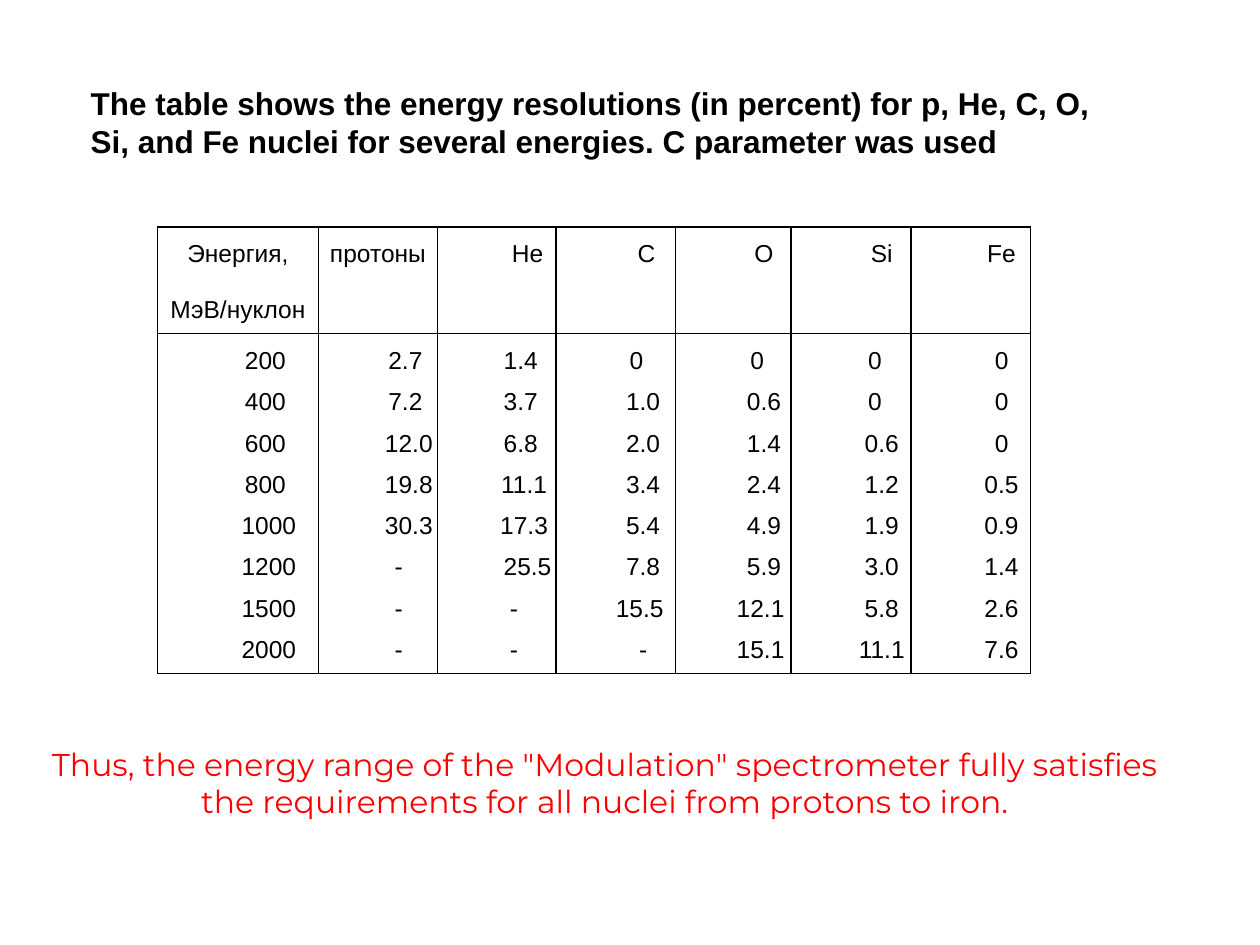
from lxml import etree
from pptx import Presentation
from pptx.dml.color import RGBColor
from pptx.enum.text import MSO_ANCHOR, MSO_AUTO_SIZE, PP_ALIGN
from pptx.oxml.ns import qn
from pptx.util import Pt

LEFT, CENTER = PP_ALIGN.LEFT, PP_ALIGN.CENTER
TOP = MSO_ANCHOR.TOP
NO_AUTOFIT = MSO_AUTO_SIZE.NONE

COLORS = {"text": "000000", "border": "000000", "conclusion": "FF0000"}
TITLE_ONLY = 5
VALUE_INDENT = 35.28
SPACE = 3.89  # width of one space in 14 pt Arial

TITLE = ("The table shows the energy resolutions (in percent) for p, He, C, O, "
         "Si, and Fe nuclei for several energies. C parameter was used")
CONCLUSION = ('Thus, the energy range of the "Modulation" spectrometer fully satisfies '
              "the requirements for all nuclei from protons to iron.")

# Header lines, width, values, and each value's shift to the left in spaces
COLUMNS = [
    (["Энергия,", "МэВ/нуклон"], 92,
     "200 400 600 800 1000 1200 1500 2000", [1, 1, 1, 1, 0, 0, 0, 0]),
    (["протоны"], 68, "2.7 7.2 12.0 19.8 30.3 - - -", [1, 1, 0, 0, 0, 3, 3, 3]),
    (["He"], 67.7, "1.4 3.7 6.8 11.1 17.3 25.5 - -", [2, 2, 2, 1, 1, 0, 4, 4]),
    (["C"], 68.3, "0 1.0 2.0 3.4 5.4 7.8 15.5 -", [3, 1, 1, 1, 1, 1, 2, 1]),
    (["O"], 66, "0 0.6 1.4 2.4 4.9 5.9 12.1 15.1", [2, 0, 0, 0, 0, 0, 1, 1]),
    (["Si"], 68.6, "0 0 0.6 1.2 1.9 3.0 5.8 11.1", [2, 2, 0, 0, 0, 0, 0, 0]),
    (["Fe"], 68.3, "0 0 0 0.5 0.9 1.4 2.6 7.6", [0] * 8),
]
ROW_HEIGHTS = [60.8, 194.4]


def add_run(paragraph, text, size, font="Arial", color="text", bold=False):
    run = paragraph.add_run()
    run.text = text
    run.font.size = Pt(size)
    run.font.name = font
    run.font.bold = bold
    run.font.color.rgb = RGBColor.from_string(COLORS[color])


def place(shape, box):
    shape.left, shape.top, shape.width, shape.height = map(Pt, box)
    frame = shape.text_frame
    frame.word_wrap = True
    frame.auto_size = NO_AUTOFIT
    frame.vertical_anchor = TOP
    return frame.paragraphs[0]


def add_title(slide, box):
    heading = place(slide.shapes.title, box)
    heading.alignment = LEFT
    add_run(heading, TITLE, 18, bold=True)


def add_conclusion(slide, box):
    conclusion = place(slide.shapes.add_textbox(*map(Pt, box)), box)
    conclusion.alignment = CENTER
    add_run(conclusion, CONCLUSION, 18, "Montserrat", "conclusion")


def format_cell(cell):
    cell.margin_left = cell.margin_right = cell.margin_top = 0
    cell.margin_bottom = Pt(5.76)
    cell.vertical_anchor = TOP
    cell.fill.background()
    properties = cell._tc.get_or_add_tcPr()
    for position, side in enumerate(("lnL", "lnR", "lnT", "lnB")):
        line = etree.Element(qn("a:" + side), w=str(Pt(1)))
        fill = etree.SubElement(line, qn("a:solidFill"))
        etree.SubElement(fill, qn("a:srgbClr"), val=COLORS["border"])
        properties.insert(position, line)


def fill_cell(cell, lines, indents, space_after):
    format_cell(cell)
    frame = cell.text_frame
    for number, (text, indent) in enumerate(zip(lines, indents)):
        paragraph = frame.add_paragraph() if number else frame.paragraphs[0]
        paragraph.alignment = CENTER
        paragraph.line_spacing = 1.5
        paragraph.space_after = Pt(space_after)
        properties = paragraph._p.get_or_add_pPr()
        properties.set("marL", "0")
        properties.set("indent", str(Pt(indent)))
        add_run(paragraph, text, 14)


def add_resolution_table(slide, box):
    table = slide.shapes.add_table(len(ROW_HEIGHTS), len(COLUMNS), *map(Pt, box)).table
    table.first_row = table.horz_banding = False
    for row, height in zip(table.rows, ROW_HEIGHTS):
        row.height = Pt(height)
    for index, (header, width, values, shifts) in enumerate(COLUMNS):
        table.columns[index].width = Pt(width)
        header_indent = VALUE_INDENT if index > 1 else 0
        fill_cell(table.cell(0, index), header, [header_indent] * len(header), 8)
        indents = [VALUE_INDENT - SPACE * shift for shift in shifts]
        fill_cell(table.cell(1, index), values.split(), indents, 0)


def main():
    presentation = Presentation()
    presentation.slide_width, presentation.slide_height = Pt(720), Pt(540)
    slide = presentation.slides.add_slide(presentation.slide_layouts[TITLE_ONLY])

    add_resolution_table(slide, (90, 129.6, 498.9, sum(ROW_HEIGHTS)))
    add_title(slide, (44.6, 44.6, 607.7, 51.1))
    add_conclusion(slide, (16.6, 421.9, 658.1, 51.1))

    presentation.save("out.pptx")


if __name__ == "__main__":
    main()
